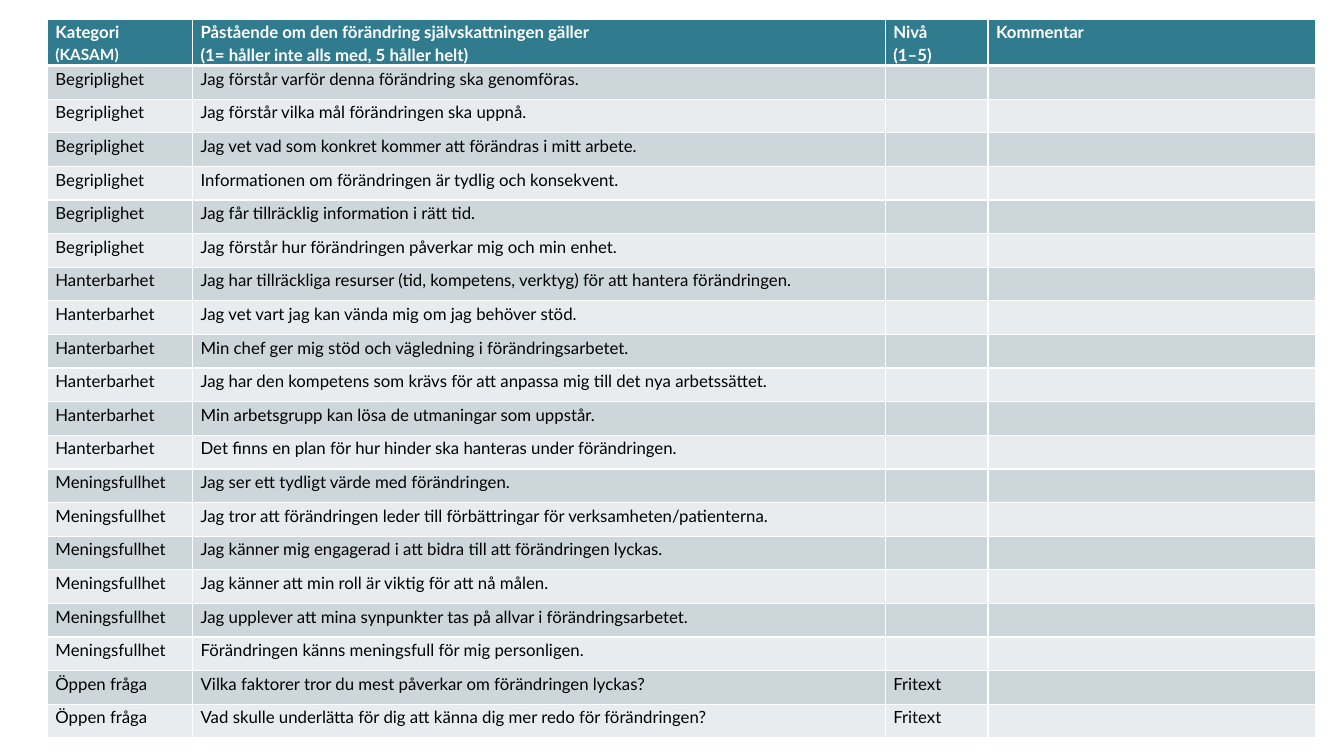
from lxml import etree
from pptx import Presentation
from pptx.dml.color import RGBColor
from pptx.oxml.ns import qn
from pptx.util import Inches, Pt

TEAL = RGBColor(0x30, 0x7C, 0x8E)
DARK = RGBColor(0xCD, 0xD7, 0xDB)
PALE = RGBColor(0xE8, 0xEC, 0xEE)
WHITE = RGBColor(0xFF, 0xFF, 0xFF)
BLACK = RGBColor(0, 0, 0)
FONT = "Lato"
SIZE = 12
WIDTHS = (1.44, 6.87, 1.02, 3.25)
HEIGHT = 7.11
TOP_ROW = 0.44

# Header cells: lists of (text, size); None is a line break
HEADS = [
    [("Kategori ", 12), ("(KASAM)", 11)],
    [("Påstående om den förändring självskattningen gäller ", 12), None,
     ("(1= håller inte alls med, 5 håller helt)", 12)],
    [("Nivå ", 12), None, ("(1–5)", 12)],
    [("Kommentar", 12)],
]

# Category, level text, statements
GROUPS = [
    ("Begriplighet", "", [
        "Jag förstår varför denna förändring ska genomföras.",
        "Jag förstår vilka mål förändringen ska uppnå.",
        "Jag vet vad som konkret kommer att förändras i mitt arbete.",
        "Informationen om förändringen är tydlig och konsekvent.",
        "Jag får tillräcklig information i rätt tid.",
        "Jag förstår hur förändringen påverkar mig och min enhet.",
    ]),
    ("Hanterbarhet", "", [
        "Jag har tillräckliga resurser (tid, kompetens, verktyg) "
        "för att hantera förändringen.",
        "Jag vet vart jag kan vända mig om jag behöver stöd.",
        "Min chef ger mig stöd och vägledning i förändringsarbetet.",
        "Jag har den kompetens som krävs för att anpassa mig "
        "till det nya arbetssättet.",
        "Min arbetsgrupp kan lösa de utmaningar som uppstår.",
        "Det finns en plan för hur hinder ska hanteras under förändringen.",
    ]),
    ("Meningsfullhet", "", [
        "Jag ser ett tydligt värde med förändringen.",
        "Jag tror att förändringen leder till förbättringar "
        "för verksamheten/patienterna.",
        "Jag känner mig engagerad i att bidra till att förändringen lyckas.",
        "Jag känner att min roll är viktig för att nå målen.",
        "Jag upplever att mina synpunkter tas på allvar "
        "i förändringsarbetet.",
        "Förändringen känns meningsfull för mig personligen.",
    ]),
    ("Öppen fråga", "Fritext", [
        "Vilka faktorer tror du mest påverkar om förändringen lyckas?",
        "Vad skulle underlätta för dig att känna dig mer redo "
        "för förändringen?",
    ]),
]


def set_edges(cell, base):
    """White borders; base is the width of the lower one in points."""
    props = cell._tc.get_or_add_tcPr()
    for i, (side, width) in enumerate(
            [("L", 1), ("R", 1), ("T", 1), ("B", base)]):
        line = etree.Element(qn("a:ln" + side), w=str(Pt(width)))
        fill = etree.SubElement(line, qn("a:solidFill"))
        etree.SubElement(fill, qn("a:srgbClr"), val=str(WHITE))
        props.insert(i, line)


def fill_cell(cell, runs, back, color, bold=False, base=1):
    cell.margin_left = cell.margin_right = Inches(0.08)
    cell.margin_top = cell.margin_bottom = 0
    cell.fill.solid()
    cell.fill.fore_color.rgb = back
    set_edges(cell, base)
    para = cell.text_frame.paragraphs[0]
    if not runs:
        # Keeps an empty cell as low as the text cells
        etree.SubElement(para._p, qn("a:endParaRPr"), sz=str(SIZE * 100))
        return
    para.line_spacing = 1.15
    para.space_after = Pt(8)
    for part in runs:
        if part is None:
            para.add_line_break()
            continue
        run = para.add_run()
        run.text, size = part
        font = run.font
        font.name, font.size, font.bold = FONT, Pt(size), bold
        font.color.rgb = color


def add_form(slide):
    rows = [(name, claim, level, "")
            for name, level, claims in GROUPS for claim in claims]
    frame = slide.shapes.add_table(
        len(rows) + 1, len(WIDTHS), Inches(0.47), Inches(0.19),
        Inches(sum(WIDTHS)), Inches(HEIGHT))
    table = frame.table
    for col, width in zip(table.columns, WIDTHS):
        col.width = Inches(width)
    step = (HEIGHT - TOP_ROW) / len(rows)
    for i, row in enumerate(table.rows):
        row.height = Inches(step if i else TOP_ROW)

    # Header row
    for c, runs in enumerate(HEADS):
        fill_cell(table.cell(0, c), runs, TEAL, WHITE, bold=True, base=3)

    # Statement rows in two alternating tints
    for r, texts in enumerate(rows, 1):
        back = DARK if r % 2 else PALE
        for c, words in enumerate(texts):
            runs = [(words, SIZE)] if words else []
            fill_cell(table.cell(r, c), runs, back, BLACK)


def main():
    deck = Presentation()
    deck.slide_width, deck.slide_height = Inches(13.33), Inches(7.5)
    add_form(deck.slides.add_slide(deck.slide_layouts[6]))
    deck.save("out.pptx")


if __name__ == "__main__":
    main()
